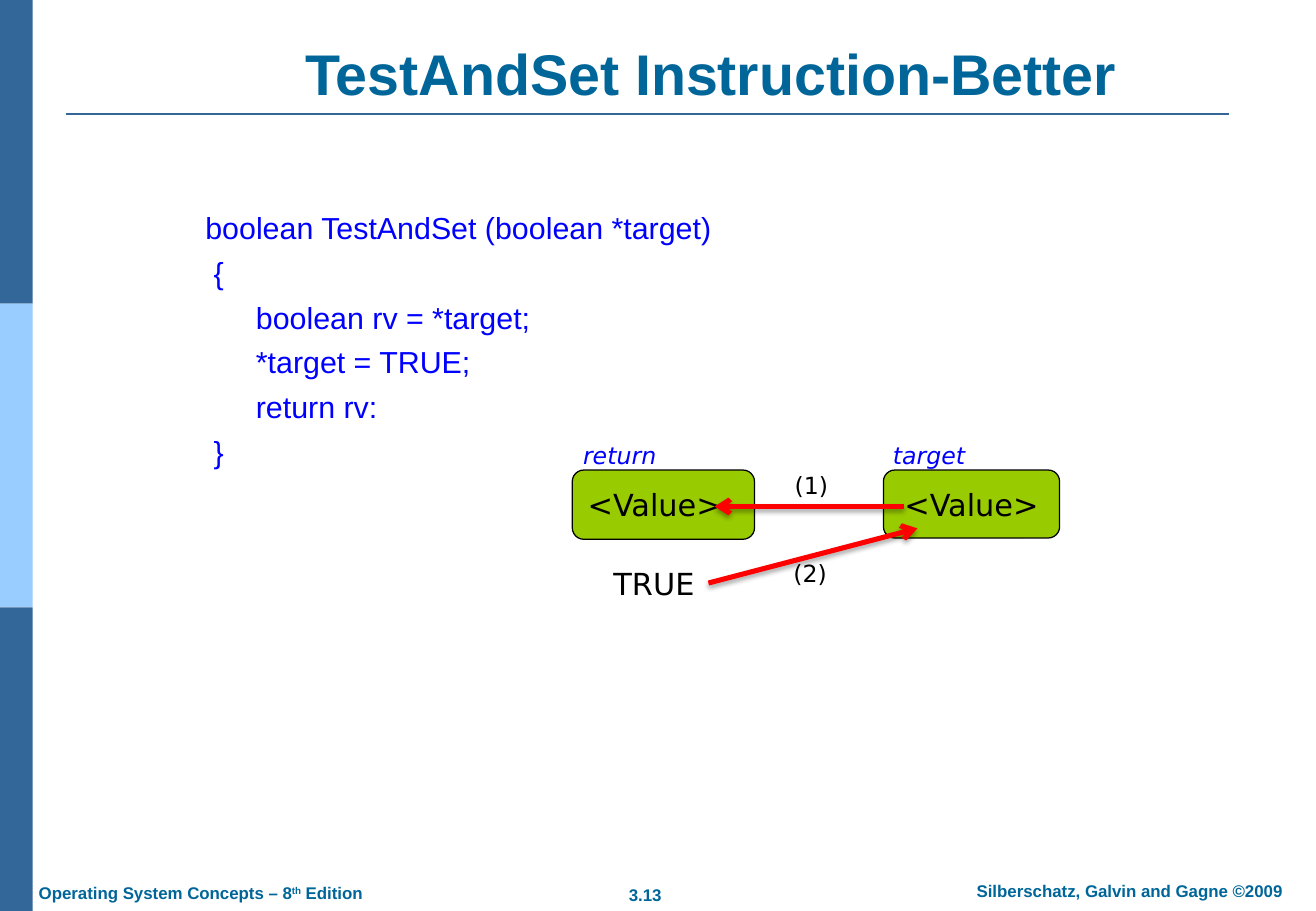
from dataclasses import dataclass

from lxml import etree
from pptx import Presentation
from pptx import util as u
from pptx.dml.color import RGBColor
from pptx.enum import shapes, text
from pptx.oxml.ns import qn

PX = 9144  # EMU per px, 100 px to the inch


@dataclass(frozen=True)
class Theme:
    navy: str = "336699"
    sky: str = "99CCFF"
    teal: str = "006699"
    code: str = "0000FF"
    ink: str = "000000"
    box: str = "99CC00"
    arrow: str = "FF0000"
    sans: str = "Arial"
    diagram: str = "DejaVu Sans"
    title_size: int = 34
    body_size: int = 18
    label_size: int = 14
    footer_size: int = 10


THEME = Theme()
LEFT, CENTER = text.PP_ALIGN.LEFT, text.PP_ALIGN.CENTER


def write(frame, lines, size=THEME.body_size, font=THEME.diagram, color=THEME.ink,
          bold=False, italic=False, align=LEFT, anchor=text.MSO_ANCHOR.TOP, wrap=False,
          grow=False, insets=(10, 5, 10, 5), spacing=None, before=0):
    """Fill a frame; each line is a list of (words, baseline percent) runs or a string."""
    frame.word_wrap = wrap
    frame.auto_size = text.MSO_AUTO_SIZE.SHAPE_TO_FIT_TEXT if grow else text.MSO_AUTO_SIZE.NONE
    frame.vertical_anchor = anchor
    frame.margin_left, frame.margin_top, frame.margin_right, frame.margin_bottom = (
        inset * PX for inset in insets)
    for index, line in enumerate(lines):
        paragraph = frame.add_paragraph() if index else frame.paragraphs[0]
        paragraph.alignment = align
        if spacing:
            paragraph.line_spacing = spacing
        if index and before:
            paragraph.space_before = u.Pt(before)
        for words, baseline in [(line, 0)] if isinstance(line, str) else line:
            run = paragraph.add_run()
            run.text = words
            run.font.size, run.font.name = u.Pt(size), font
            run.font.bold, run.font.italic = bold, italic
            run.font.color.rgb = RGBColor.from_string(color)
            if baseline:
                run._r.get_or_add_rPr().set("baseline", str(baseline * 1000))


class Page:
    def __init__(self, slide, theme):
        self.shapes, self.theme = slide.shapes, theme

    def block(self, area, fill, outline=None, kind=shapes.MSO_SHAPE.RECTANGLE):
        shape = self.shapes.add_shape(kind, *(side * PX for side in area))
        shape.shadow.inherit = False
        shape.fill.solid()
        shape.fill.fore_color.rgb = RGBColor.from_string(fill)
        if outline:
            shape.line.color.rgb = RGBColor.from_string(outline)
            shape.line.width = u.Pt(0.75)
        else:
            shape.line.fill.background()
        return shape

    def value_box(self, area, align):
        shape = self.block(area, self.theme.box, self.theme.ink,
                           shapes.MSO_SHAPE.ROUNDED_RECTANGLE)
        write(shape.text_frame, ["<Value>"], align=align, anchor=text.MSO_ANCHOR.MIDDLE)

    def words(self, area, lines, **style):
        box = self.shapes.add_textbox(*(side * PX for side in area))
        write(box.text_frame, lines, **style)

    def footer(self, area, line, **style):
        self.words(area, [line], size=self.theme.footer_size, font=self.theme.sans,
                   color=self.theme.teal, bold=True, grow=True, **style)

    def line(self, start, end, color, width):
        connector = self.shapes.add_connector(
            shapes.MSO_CONNECTOR.STRAIGHT, *(c * PX for c in start + end))
        connector.line.color.rgb = RGBColor.from_string(color)
        connector.line.width = u.Pt(width)
        effects = etree.SubElement(connector._element.spPr, qn("a:effectLst"))
        return connector, effects

    def arrow(self, start, end):
        connector, effects = self.line(start, end, self.theme.arrow, 3)
        etree.SubElement(connector.line._get_or_add_ln(), qn("a:tailEnd"), type="arrow")
        shadow = etree.SubElement(effects, qn("a:outerShdw"), blurRad=str(u.Pt(3.1)),
                                  dist=str(u.Pt(1.8)), dir="5400000", rotWithShape="0")
        shade = etree.SubElement(shadow, qn("a:srgbClr"), val=self.theme.ink)
        etree.SubElement(shade, qn("a:alpha"), val="35000")


def main():
    deck = Presentation()
    deck.slide_width, deck.slide_height = 1083 * PX, 750 * PX
    page = Page(deck.slides.add_slide(deck.slide_layouts[6]), THEME)

    # Side band and title rule
    for row, fill in enumerate((THEME.navy, THEME.sky, THEME.navy)):
        page.block((0, 250 * row, 27, 250), fill)
    page.line((54, 94), (1011, 94), THEME.navy, 1.5)

    # Footer
    page.footer((506, 723, 50, 28), "3.13", align=CENTER)
    page.footer((769, 720, 321, 28), "Silberschatz, Galvin and Gagne ©2009",
                align=CENTER, wrap=True)
    page.footer((22, 722, 291, 28),
                [("Operating System Concepts – 8", 0), ("th", 30), (" Edition", 0)])

    # Title
    page.words((153, 30, 877, 63), ["TestAndSet Instruction-Better"], size=THEME.title_size,
               font=THEME.sans, color=THEME.teal, bold=True, align=CENTER,
               anchor=text.MSO_ANCHOR.BOTTOM, wrap=True, insets=(10, 5, 23, 5))

    # Code
    code = ["boolean TestAndSet (boolean *target)",
            " {",
            "      boolean rv = *target;",
            "      *target = TRUE;",
            "      return rv:",
            " }"]
    page.words((96, 135, 878, 484), code, font=THEME.sans, color=THEME.code, wrap=True,
               insets=(73, 41, 10, 5), spacing=0.9, before=7)

    # Value exchange diagram
    page.value_box((727, 387, 145, 56), CENTER)
    page.value_box((471, 387, 150, 57), LEFT)
    page.arrow((744, 417), (588, 417))
    page.words((495, 460, 88, 40), ["TRUE"], grow=True)
    page.arrow((583, 480), (755, 435))
    for step, area in (("(1)", (644, 383, 51, 34)), ("(2)", (643, 455, 51, 34))):
        page.words(area, [step], size=THEME.label_size, grow=True)
    for variable, area in (("target", (725, 358, 85, 34)), ("return", (470, 358, 87, 34))):
        page.words(area, [variable], size=THEME.label_size, color=THEME.code,
                   italic=True, grow=True)

    deck.save("out.pptx")


if __name__ == "__main__":
    main()
